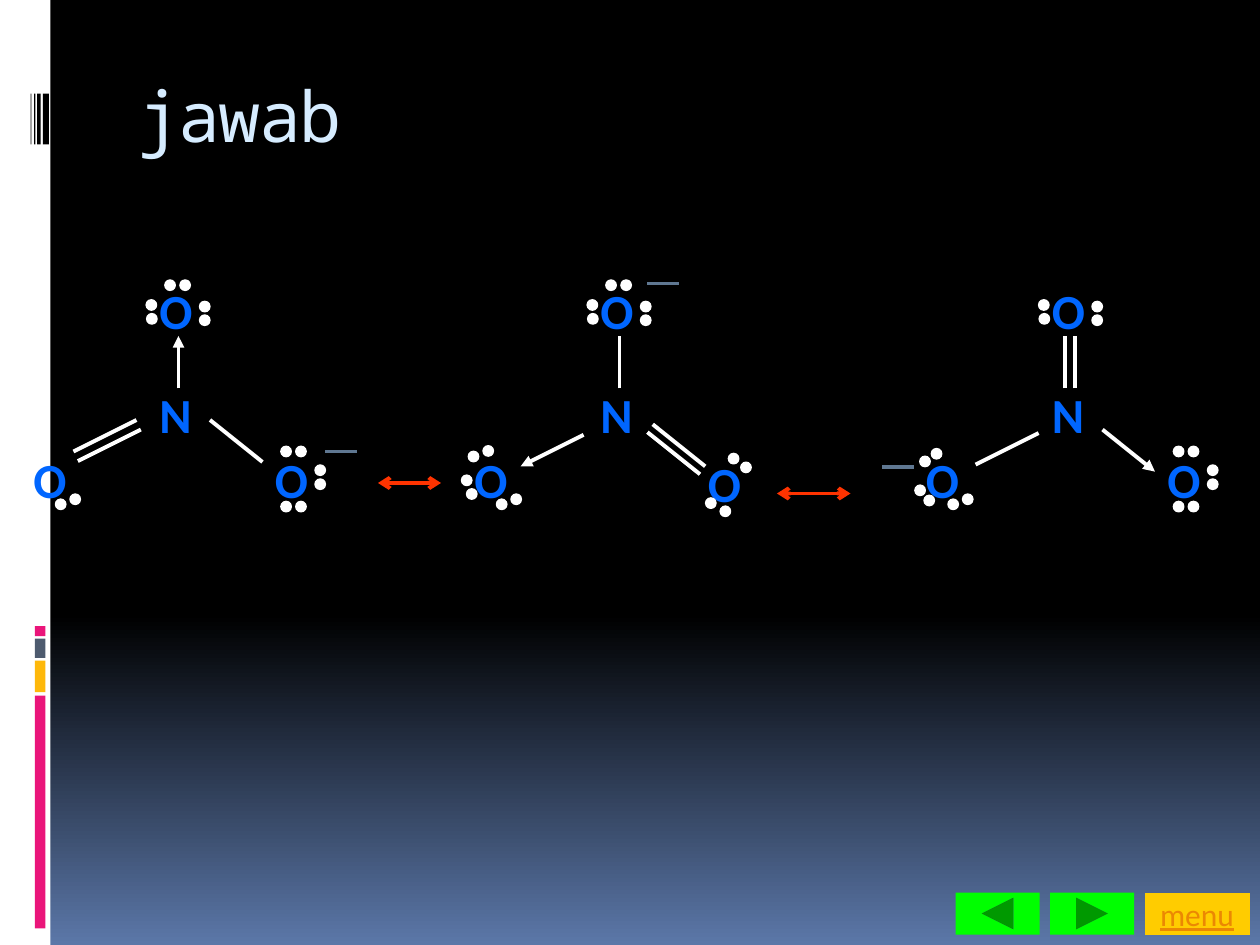
import pptx
import pptx.dml.color
import pptx.enum.dml
import pptx.enum.shapes
import pptx.enum.text
import pptx.oxml
import pptx.oxml.ns
import pptx.util

Pt = pptx.util.Pt
SHAPES = pptx.enum.shapes.MSO_SHAPE
ALIGN = pptx.enum.text.PP_ALIGN
ANCHOR = pptx.enum.text.MSO_ANCHOR

WHITE, BLACK, BLUE, SLATE, RED = "FFFFFF", "000000", "0066FF", "5F7791", "FF3300"
ATOM_WIDTH, ATOM_HEIGHT, DOT, CHARGE_LENGTH = 30, 41, 6, 18
BUTTON_TOP, BUTTON_HEIGHT = 510, 24

# left, top, width, height, colour
SIDEBAR = [
    (0, 0, 28.8, 540, WHITE),
    (20, 397.5, 6, 133, "EA157A"),
    (20, 377.5, 6, 18, "FEB80A"),
    (20, 365, 6, 11, "4E5B6F"),
    (20, 357.75, 6, 5.75, "EA157A"),
    (24.5, 53.5, 3.5, 29, BLACK),
    (21.25, 53.5, 2, 29, BLACK),
    (19.5, 53.5, 0.75, 29, BLACK),
    (17.5, 53.5, 0.5, 29, BLACK),
]

# Lone pairs: offsets of the two dots from the corner of the atom's box
ABOVE = [(10.5, 1.5), (19, 1.5)]
BELOW = [(10.5, 33), (19, 33)]
RIGHT = [(30, 12.2), (30, 20.2)]
LOWER_RIGHT = [(19.7, 31.7), (28, 28.8)]
# The top oxygen carries its pairs slightly lower
TOP_ABOVE = [(10.2, 3), (18.8, 3)]
TOP_RIGHT = [(30, 15.2), (30, 23)]
TOP_LEFT = [(-0.5, 14.3), (-0.2, 22.2)]

# atoms: symbol, left, top, lone pairs
# bonds: points from nitrogen to oxygen; a dative bond has an arrowhead
# charge: left, height of the minus sign
STRUCTURES = [
    {
        "atoms": [
            ("O", 84, 157, TOP_ABOVE + TOP_RIGHT + TOP_LEFT),
            ("O", 150, 253.5, ABOVE + RIGHT + BELOW),
            ("O", 12, 253.5, LOWER_RIGHT + [(1.5, 6.5), (10, 3)]),
            ("N", 84, 216, []),
        ],
        "bonds": [(78, 240, 42, 258), (80.5, 245.5, 44.5, 263.5), (120, 240, 150, 264)],
        "dative": (102, 222, 102, 192),
        "charge": (186, 258),
    },
    {
        "atoms": [
            ("O", 336, 157, TOP_ABOVE + TOP_RIGHT + TOP_LEFT),
            ("O", 397.5, 255.5, [(18.7, 3.6), (25.8, 8.6), (5.7, 29), (14, 33.7)]),
            ("O", 264, 253.5,
             LOWER_RIGHT + [(3.6, 4.4), (12, 1.2), (-0.3, 18), (2.6, 25.8)]),
            ("N", 336, 216, []),
        ],
        "bonds": [(354, 222, 354, 192), (373, 242.5, 403, 266.5), (370, 247, 400, 271)],
        "dative": (333.5, 248.5, 297.5, 266.5),
        "charge": (370, 162),
    },
    {
        "atoms": [
            ("O", 594, 157, TOP_RIGHT + TOP_LEFT),
            ("O", 660, 253.5, ABOVE + RIGHT + BELOW),
            ("O", 522, 253.5,
             LOWER_RIGHT + [(3.6, 7.2), (10.2, 2.8), (0.8, 23.7), (6, 29.5)]),
            ("N", 594, 216, []),
        ],
        "bonds": [(608.5, 222, 608.5, 192), (614.5, 222, 614.5, 192),
                  (593.5, 247.5, 557.5, 265.5)],
        "dative": (630, 245.5, 660, 269.5),
        "charge": (504, 267),
    },
]

RESONANCE_ARROWS = [(216, 276, 252, 276), (444, 282, 486, 282)]

# shape, left, width, colour, label
BUTTONS = [
    (SHAPES.ACTION_BUTTON_FORWARD_OR_NEXT, 600, 48, "00FF00", ""),
    (SHAPES.ACTION_BUTTON_BACK_OR_PREVIOUS, 546, 48, "00FF00", ""),
    (SHAPES.ACTION_BUTTON_CUSTOM, 654, 60, "FFCC00", "menu"),
]


def color(value):
    return pptx.dml.color.RGBColor.from_string(value)


def set_all(target, values):
    for name, value in values.items():
        setattr(target, name, value)


def add_shape(slide, kind, left, top, width, height, fill, outline=None):
    shape = slide.shapes.add_shape(kind, Pt(left), Pt(top), Pt(width), Pt(height))
    shape.shadow.inherit = False
    shape.fill.solid()
    shape.fill.fore_color.rgb = color(fill)
    if outline:
        shape.line.color.rgb = color(outline)
        shape.line.width = Pt(0.75)
    else:
        shape.line.fill.background()
    return shape


def add_line(slide, points, line_color, **arrowheads):
    """Arrowheads are headEnd (start) and tailEnd (finish), each with its type."""
    connector = slide.shapes.add_connector(
        pptx.enum.shapes.MSO_CONNECTOR.STRAIGHT, *[Pt(value) for value in points])
    connector.line.color.rgb = color(line_color)
    connector.line.width = Pt(2.25)
    line = connector.line._get_or_add_ln()
    for tag, kind in arrowheads.items():
        pptx.oxml.ns.qn("a:" + tag)
        end = line.makeelement(pptx.oxml.ns.qn("a:" + tag), {"type": kind})
        line.append(end)
    properties = connector._element.spPr
    properties.append(properties.makeelement(pptx.oxml.ns.qn("a:effectLst"), {}))


def write(shape, text, font, text_color, align=ALIGN.CENTER, **frame):
    set_all(shape.text_frame, frame)
    paragraph = shape.text_frame.paragraphs[0]
    paragraph.alignment = align
    run = paragraph.add_run()
    run.text = text
    set_all(run.font, font)
    run.font.color.rgb = color(text_color)
    return run


def add_title(slide):
    box = slide.shapes.add_textbox(Pt(72), Pt(40.5), Pt(612), Pt(72))
    run = write(box, "jawab", {"name": "Noto Sans Mono", "size": Pt(40)}, "D6ECFF",
                ALIGN.LEFT, word_wrap=True, vertical_anchor=ANCHOR.TOP,
                margin_top=Pt(1))
    run.font._element.set("spc", "-100")


def add_structure(slide, structure):
    for symbol, left, top, dots in structure["atoms"]:
        box = slide.shapes.add_textbox(Pt(left), Pt(top), Pt(ATOM_WIDTH), Pt(ATOM_HEIGHT))
        write(box, symbol, {"name": "Calibri", "size": Pt(28), "bold": True}, BLUE,
              word_wrap=True)
        for across, down in dots:
            add_shape(slide, SHAPES.OVAL, left + across, top + down, DOT, DOT, WHITE, WHITE)
    for bond in structure["bonds"]:
        add_line(slide, bond, WHITE)
    add_line(slide, structure["dative"], WHITE, tailEnd="triangle")
    left, height = structure["charge"]
    add_line(slide, (left, height, left + CHARGE_LENGTH, height), SLATE)


def main():
    presentation = pptx.Presentation()
    set_all(presentation, {"slide_width": Pt(720), "slide_height": Pt(540)})
    slide = presentation.slides.add_slide(presentation.slide_layouts[6])

    background = slide.background.fill
    background.gradient()
    background.gradient_angle = 270
    for stop, position, value in zip(background.gradient_stops, (0.65, 1), (BLACK, "5B77A8")):
        stop.position = position
        stop.color.rgb = color(value)

    for *place, fill in SIDEBAR:
        add_shape(slide, SHAPES.RECTANGLE, *place, fill)
    add_title(slide)
    for structure in STRUCTURES:
        add_structure(slide, structure)
    for points in RESONANCE_ARROWS:
        add_line(slide, points, RED, headEnd="arrow", tailEnd="arrow")
    for kind, left, width, fill, label in BUTTONS:
        button = add_shape(slide, kind, left, BUTTON_TOP, width, BUTTON_HEIGHT, fill)
        if label:
            write(button, label, {"name": "Calibri", "size": Pt(18), "underline": True},
                  "EB8803", word_wrap=False, vertical_anchor=ANCHOR.MIDDLE)

    presentation.save("out.pptx")


if __name__ == "__main__":
    main()
